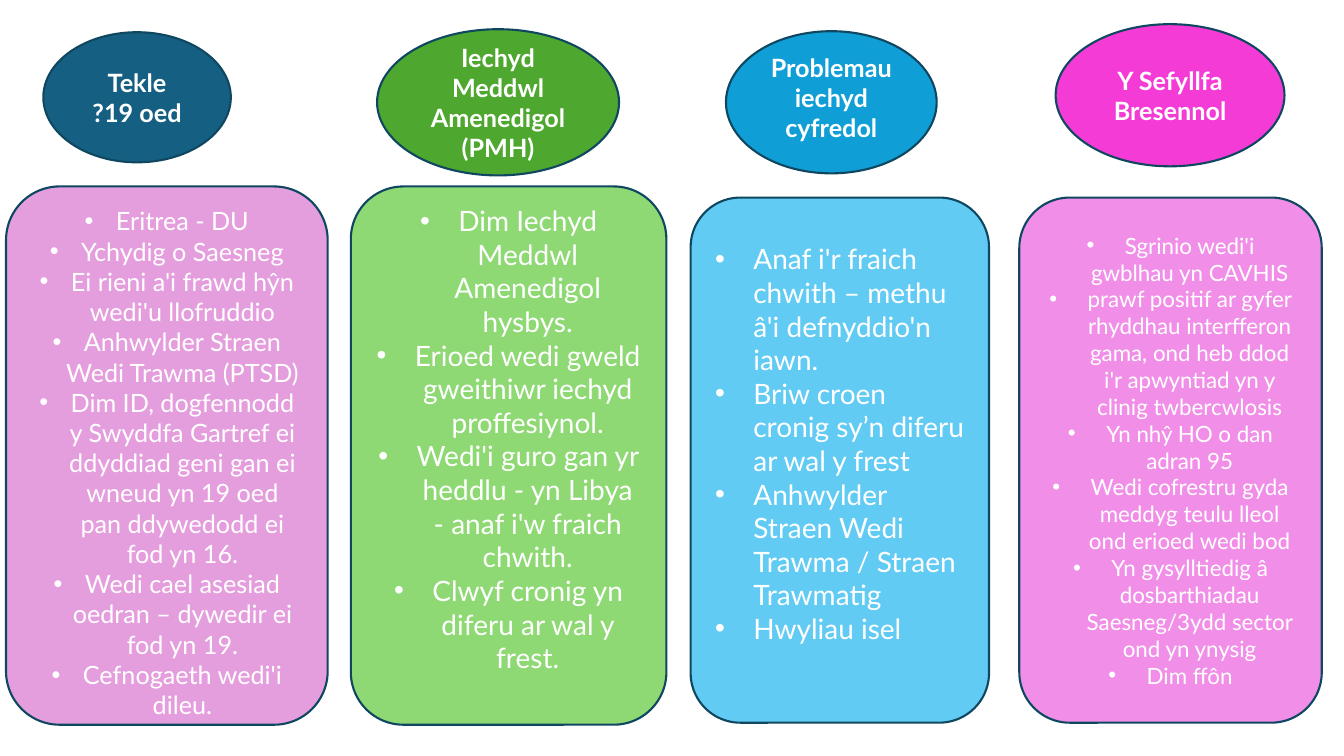
from lxml import etree
from pptx import Presentation
from pptx.dml.color import RGBColor
from pptx.enum.shapes import MSO_SHAPE
from pptx.enum.text import MSO_ANCHOR, PP_ALIGN
from pptx.oxml.ns import qn
from pptx.util import Inches, Pt

OVAL, ROUND = MSO_SHAPE.OVAL, MSO_SHAPE.ROUNDED_RECTANGLE
LEFT, CENTER = PP_ALIGN.LEFT, PP_ALIGN.CENTER
MIDDLE = MSO_ANCHOR.MIDDLE
FONT = "Lato"
COLORS = {
    "edge": "104760", "text": "FFFFFF",
    "teal": "156082", "mauve": "E59EDD",
    "green": "4EA72E", "lime": "8ED973",
    "blue": "0F9ED5", "sky": "61CBF4",
    "pink": "F53BD6", "rose": "F18FE8",
}

COLUMNS = [
    {
        "head": ((0.43, 0.32, 1.86, 1.29), "teal", ["Tekle", "?19 oed"]),
        "card": ((0.06, 1.85, 3.19, 5.34), "mauve", [
            "Eritrea - DU",
            "Ychydig o Saesneg",
            "Ei rieni a'i frawd hŷn wedi'u llofruddio",
            "Anhwylder Straen Wedi Trawma (PTSD)",
            "Dim ID, dogfennodd y Swyddfa Gartref ei ddyddiad geni gan ei "
            "wneud yn 19 oed pan ddywedodd ei fod yn 16.",
            "Wedi cael asesiad oedran – dywedir ei fod yn 19.",
            "Cefnogaeth wedi'i dileu.",
        ]),
        "style": {"size": 18, "indent": 0.31, "pad": (0.14, 0)},
    },
    {
        "head": ((3.74, 0.29, 2.4, 1.45), "green",
                 ["Iechyd Meddwl Amenedigol (PMH)"]),
        "card": ((3.48, 1.85, 3.13, 5.34), "lime", [
            "Dim Iechyd Meddwl Amenedigol hysbys.",
            "Erioed wedi gweld gweithiwr iechyd proffesiynol.",
            "Wedi'i guro gan yr heddlu - yn Libya - anaf i'w fraich chwith.",
            "Clwyf cronig yn diferu ar wal y frest.",
        ]),
        "style": {"size": 20, "pad": (0.05, 0.38)},
    },
    {
        "head": ((7.2, 0.31, 2.09, 1.41), "blue",
                 ["Problemau iechyd cyfredol"], (0.05, 0.15)),
        "card": ((6.85, 1.96, 2.96, 5.21), "sky", [
            "Anaf i'r fraich chwith – methu â'i defnyddio'n iawn.",
            "Briw croen cronig sy’n diferu ar wal y frest",
            "Anhwylder Straen Wedi Trawma / Straen Trawmatig",
            "Hwyliau isel",
        ]),
        "style": {"size": 20, "align": LEFT, "pad": (0.05, 0.38)},
    },
    {
        "head": ((10.47, 0.24, 2.27, 1.41), "pink", ["Y Sefyllfa Bresennol"]),
        "card": ((10.11, 1.96, 3, 5.21), "rose", [
            "Sgrinio wedi'i gwblhau yn CAVHIS",
            "prawf positif ar gyfer rhyddhau interfferon gama, ond heb ddod "
            "i'r apwyntiad yn y clinig twbercwlosis",
            "Yn nhŷ HO o dan adran 95",
            "Wedi cofrestru gyda meddyg teulu lleol ond erioed wedi bod",
            "Yn gysylltiedig â dosbarthiadau Saesneg/3ydd sector ond yn ynysig",
            "Dim ffôn",
        ]),
        "style": {"size": 16},
    },
]


def paint(name):
    """Return the named colour."""
    return RGBColor.from_string(COLORS[name])


def add_panel(slide, kind, box, fill, lines, pad):
    """Place an outlined shape in its box and return its paragraphs."""
    shape = slide.shapes.add_shape(kind, *map(Inches, box))
    shape.shadow.inherit = False
    shape.fill.solid()
    shape.fill.fore_color.rgb = paint(fill)
    shape.line.color.rgb = paint("edge")
    shape.line.width = Pt(1.5)
    frame = shape.text_frame
    frame.word_wrap = True
    frame.vertical_anchor = MIDDLE
    frame.margin_top, frame.margin_bottom = map(Inches, pad)
    frame.text = "\n".join(lines)
    return frame.paragraphs


def style_text(para, size, align, bold=False):
    """Set the font and alignment of one paragraph."""
    para.alignment = align
    for run in para.runs:
        run.font.name = FONT
        run.font.size = Pt(size)
        run.font.bold = bold
        run.font.color.rgb = paint("text")


def add_bullet(para, indent):
    """Give one paragraph a hanging bullet."""
    props = para._p.get_or_add_pPr()
    props.set("marL", str(Inches(indent)))
    props.set("indent", str(-Inches(indent)))
    etree.SubElement(props, qn("a:buFont")).set("typeface", "Arial")
    etree.SubElement(props, qn("a:buChar")).set("char", "•")


def add_head(slide, box, fill, lines, pad=(0.05, 0.05)):
    """Draw the oval heading of a column."""
    for para in add_panel(slide, OVAL, box, fill, lines, pad):
        style_text(para, 18, CENTER, True)


def add_card(slide, box, fill, lines, size, indent=0.38, align=CENTER,
             pad=(0.05, 0.05)):
    """Draw the rounded card with the bullets of a column."""
    for para in add_panel(slide, ROUND, box, fill, lines, pad):
        add_bullet(para, indent)
        style_text(para, size, align)


def main():
    """Build the slide and save it."""
    deck = Presentation()
    deck.slide_width, deck.slide_height = Inches(13.33), Inches(7.5)
    slide = deck.slides.add_slide(deck.slide_layouts[6])
    for col in COLUMNS:
        add_head(slide, *col["head"])
        add_card(slide, *col["card"], **col["style"])
    deck.save("out.pptx")


if __name__ == "__main__":
    main()
